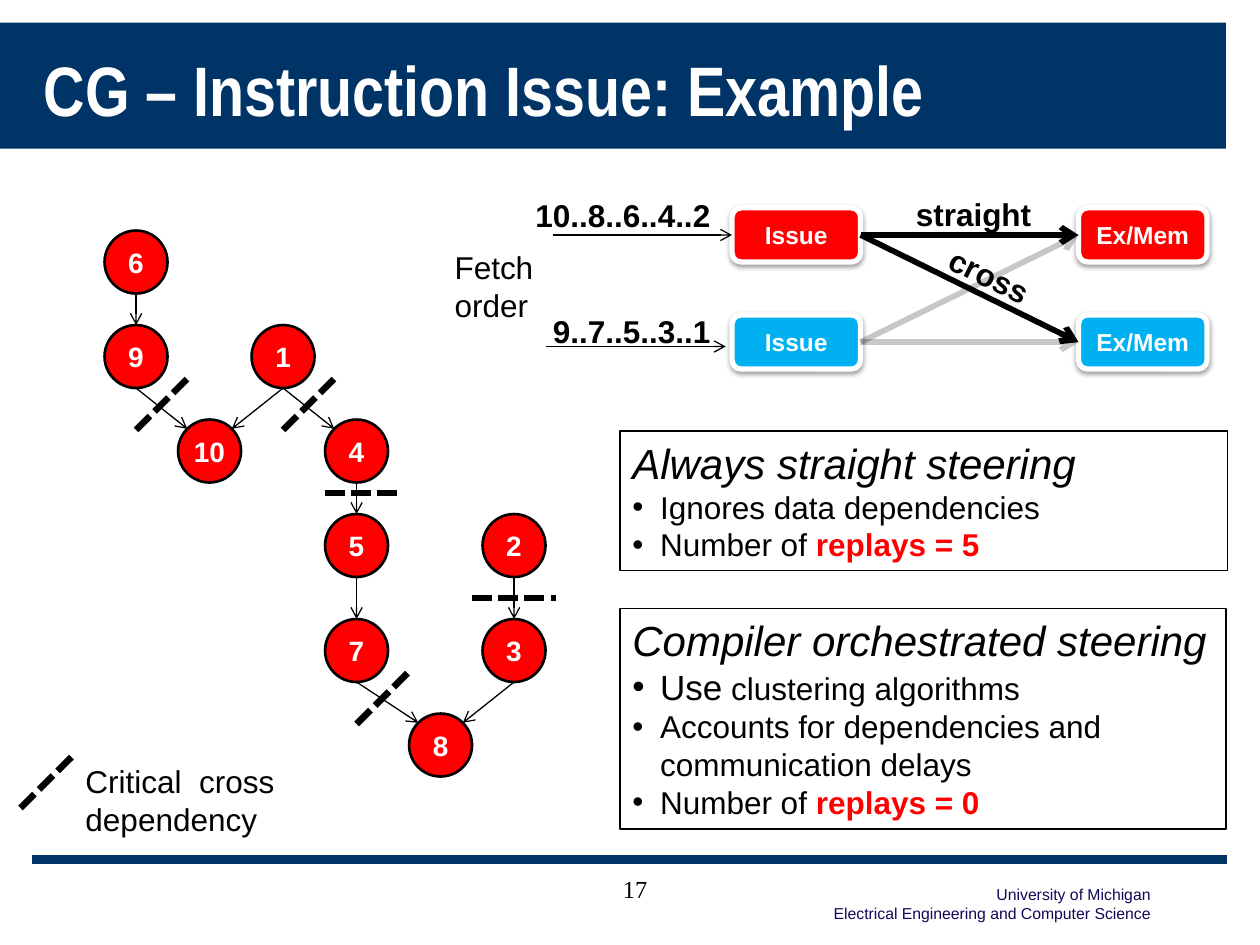
from lxml.etree import SubElement
from pptx import Presentation
from pptx.dml.color import RGBColor
from pptx.enum.dml import MSO_LINE
from pptx.enum.shapes import MSO_CONNECTOR, MSO_SHAPE
from pptx.enum.text import MSO_ANCHOR, PP_ALIGN
from pptx.oxml.ns import qn
from pptx.util import Inches, Pt

NAVY = RGBColor(0x00, 0x33, 0x66)
INDIGO = RGBColor(0x0F, 0x09, 0x58)
RED = RGBColor(0xFF, 0x00, 0x00)
BLUE = RGBColor(0x00, 0xB0, 0xF0)
BLACK = RGBColor(0, 0, 0)
WHITE = RGBColor(0xFF, 0xFF, 0xFF)
UNIT = 1 / 12  # grid step of the graph, in inches


def add_run(para, text, size, color=BLACK, bold=False, slant=False, font="Arial"):
    run = para.add_run()
    run.text = text
    face = run.font
    face.name, face.size, face.bold, face.italic = font, Pt(size), bold, slant
    face.color.rgb = color


def add_text(slide, box, lines, size, align=PP_ALIGN.LEFT, wrap=False, **style):
    label = slide.shapes.add_textbox(*map(Inches, box))
    frame = label.text_frame
    frame.word_wrap = wrap
    for i, line in enumerate(lines):
        para = frame.add_paragraph() if i else frame.paragraphs[0]
        para.alignment = align
        add_run(para, line, size, **style)
    return label


def add_box(slide, kind, box, fill=None, edge=None, width=0.75):
    shape = slide.shapes.add_shape(kind, *map(Inches, box))
    if fill is None:
        shape.fill.background()
    else:
        shape.fill.solid()
        shape.fill.fore_color.rgb = fill
    if edge is None:
        shape.line.fill.background()
    else:
        shape.line.color.rgb = edge
        shape.line.width = Pt(width)
    shape.shadow.inherit = False
    return shape


def add_name(shape, text, size):
    frame = shape.text_frame
    frame.word_wrap = False
    frame.vertical_anchor = MSO_ANCHOR.MIDDLE
    para = frame.paragraphs[0]
    para.alignment = PP_ALIGN.CENTER
    add_run(para, text, size, WHITE, bold=True)


def add_line(slide, start, end, width=0.75, color=BLACK, arrow=False, dash=False, alpha=None):
    link = slide.shapes.add_connector(MSO_CONNECTOR.STRAIGHT, *map(Inches, (*start, *end)))
    link.line.color.rgb = color
    link.line.width = Pt(width)
    if dash:
        link.line.dash_style = MSO_LINE.SQUARE_DOT
    props = link.line._get_or_add_ln()
    if alpha:
        SubElement(props.find(".//" + qn("a:srgbClr")), qn("a:alpha"), val=str(alpha * 1000))
    if arrow:
        SubElement(props, qn("a:tailEnd"), type="arrow")
    SubElement(link._element.spPr, qn("a:effectLst"))
    return link


def add_frame(slide, wide, high):
    # Title band, footer rule, credit and page number
    add_box(slide, MSO_SHAPE.RECTANGLE, (-0.01, 0.18, wide * 0.974, 1), NAVY)
    add_text(slide, (wide * 0.651, high - 0.53, 2.72, 0.4),
             ["University of Michigan", "Electrical Engineering and Computer Science"],
             9, PP_ALIGN.RIGHT, color=INDIGO)
    add_line(slide, (0.25, high - 0.68), (wide * 0.974, high - 0.68), 5, NAVY)
    title = add_text(slide, (0.25, 0.25, wide * 0.925, 0.9), ["CG – Instruction Issue: Example"],
                     40, wrap=True, color=WHITE, bold=True, font="Arial Narrow")
    title.text_frame.vertical_anchor = MSO_ANCHOR.MIDDLE
    add_text(slide, (wide * 0.4, high - 0.61, 2.08, 0.5), ["17"], 14, PP_ALIGN.CENTER,
             wrap=True, font="Times New Roman")


def add_graph(slide, left, top):
    # Centre of each instruction, in grid steps from node 6
    nodes = {1: (14, 9), 10: (7, 18), 9: (0, 9), 6: (0, 0), 4: (21, 18),
             5: (21, 27), 7: (21, 37), 8: (29, 46), 3: (36, 37), 2: (36, 27)}
    edges = [(6, 9), (9, 10), (1, 10), (1, 4), (4, 5), (5, 7), (2, 3), (3, 8), (7, 8)]
    # Start and reach of each critical cross dependency; the last is the key
    cuts = [(0, 16, 5, -5), (14, 16, 5, -5), (18, 22, 7, 0), (21, 44, 5, -5),
            (32, 32, 8, 0), (-11, 52, 5, -5)]
    ray = 3
    slant = ray * 0.5 ** 0.5

    def spot(x, y):
        return left + x * UNIT, top + y * UNIT

    for name, (x, y) in nodes.items():
        size = 2 * ray * UNIT
        node = add_box(slide, MSO_SHAPE.OVAL, (*spot(x - ray, y - ray), size, size), RED, BLACK, 1.5)
        add_name(node, str(name), 16)
    for head, tail in edges:
        (x, y), (u, v) = nodes[head], nodes[tail]
        if x == u:
            end = spot(u, v - ray)
        else:
            end = spot(u + (slant if x > u else -slant), v - slant)
        add_line(slide, spot(x, y + ray), end, arrow=True)
    for x, y, across, down in cuts:
        add_line(slide, spot(x, y), spot(x + across, y + down), 3.75, dash=True)
    add_text(slide, (*spot(-6, 47), 1.79, 0.71), ["Critical  cross", "dependency"], 18)


def add_pipes(slide, left, top):
    # Two rows of issue and execute stages
    wide, high, step, gap = 1.02, 0.43, 2.75, 0.85
    issue, unit = [], []
    for row, color in enumerate((RED, BLUE)):
        for col, (name, group) in enumerate((("Issue", issue), ("Ex/Mem", unit))):
            box = (left + col * step, top + row * gap, wide, high)
            stage = add_box(slide, MSO_SHAPE.ROUNDED_RECTANGLE, box, color, WHITE, 3)
            glow = SubElement(stage._element.spPr.find(qn("a:effectLst")), qn("a:outerShdw"),
                              blurRad=str(Pt(3.1)), dist=str(Pt(1.6)), dir="5400000", rotWithShape="0")
            tint = SubElement(glow, qn("a:srgbClr"), val="000000")
            SubElement(tint, qn("a:alpha"), val="38000")
            add_name(stage, name, 14)
            group.append(stage)
    # Steering paths: those of the lower row are faint
    for a, b, alpha in ((0, 0, None), (0, 1, None), (1, 1, 21), (1, 0, 21)):
        link = add_line(slide, (left, top), (left + step, top), 3.25, arrow=True, alpha=alpha)
        link.begin_connect(issue[a], 3)
        link.end_connect(unit[b], 1)
    add_text(slide, (left + 1.36, top - 0.15, 1.13, 0.4), ["straight"], 18, bold=True)
    cross = add_text(slide, (left + 1.61, top + 0.34, 0.88, 0.4), ["cross"], 18, bold=True)
    cross.rotation = 26.3
    # Fetch order
    mid = top + high / 2
    feed = add_line(slide, (left - 1.42, mid), (left, mid), arrow=True)
    feed.end_connect(issue[0], 1)
    add_line(slide, (left - 1.48, top + 1.1), (left - 0.05, top + 1.1), arrow=True)
    add_text(slide, (left - 2.3, top + 0.27, 0.9, 0.71), ["Fetch", "order"], 18)
    add_text(slide, (left - 1.66, top - 0.14, 1.6, 0.4), ["10..8..6..4..2"], 18, bold=True)
    add_text(slide, (left - 1.52, top + 0.78, 1.46, 0.4), ["9..7..5..3..1"], 18, bold=True)


def add_panel(slide, box, head, items):
    # Each item is a bullet flag and its runs of text, size and red flag
    frame = add_box(slide, MSO_SHAPE.RECTANGLE, box, edge=BLACK).text_frame
    frame.word_wrap = False
    frame.vertical_anchor = MSO_ANCHOR.TOP
    para = frame.paragraphs[0]
    para.alignment = PP_ALIGN.LEFT
    add_run(para, head, 24, slant=True)
    for dot, runs in items:
        para = frame.add_paragraph()
        para.alignment = PP_ALIGN.LEFT
        props = para._p.get_or_add_pPr()
        props.set("marL", str(Inches(0.22)))
        if dot:
            props.set("indent", str(-Inches(0.22)))
            SubElement(props, qn("a:buFont"), typeface="Arial")
            SubElement(props, qn("a:buChar"), char="•")
        for text, size, red in runs:
            add_run(para, text, size, RED if red else BLACK, bold=red)


def count(value):
    return True, [("Number of ", 18, False), (f"replays = {value}", 18, True)]


def main():
    deck = Presentation()
    deck.slide_width, deck.slide_height = Inches(10), Inches(7.5)
    slide = deck.slides.add_slide(deck.slide_layouts[6])
    add_frame(slide, 10, 7.5)
    add_graph(slide, 1.08, 2.08)
    add_pipes(slide, 5.81, 1.65)
    add_panel(slide, (4.92, 3.42, 4.82, 1.11), "Always straight steering",
              [(True, [("Ignores data dependencies", 18, False)]), count(5)])
    add_panel(slide, (4.92, 4.83, 4.81, 1.75), "Compiler orchestrated steering",
              [(True, [("Use", 20, False), (" clustering algorithms", 18, False)]),
               (True, [("Accounts for dependencies and", 18, False)]),
               (False, [("communication delays", 18, False)]), count(0)])
    deck.save("out.pptx")


if __name__ == "__main__":
    main()
